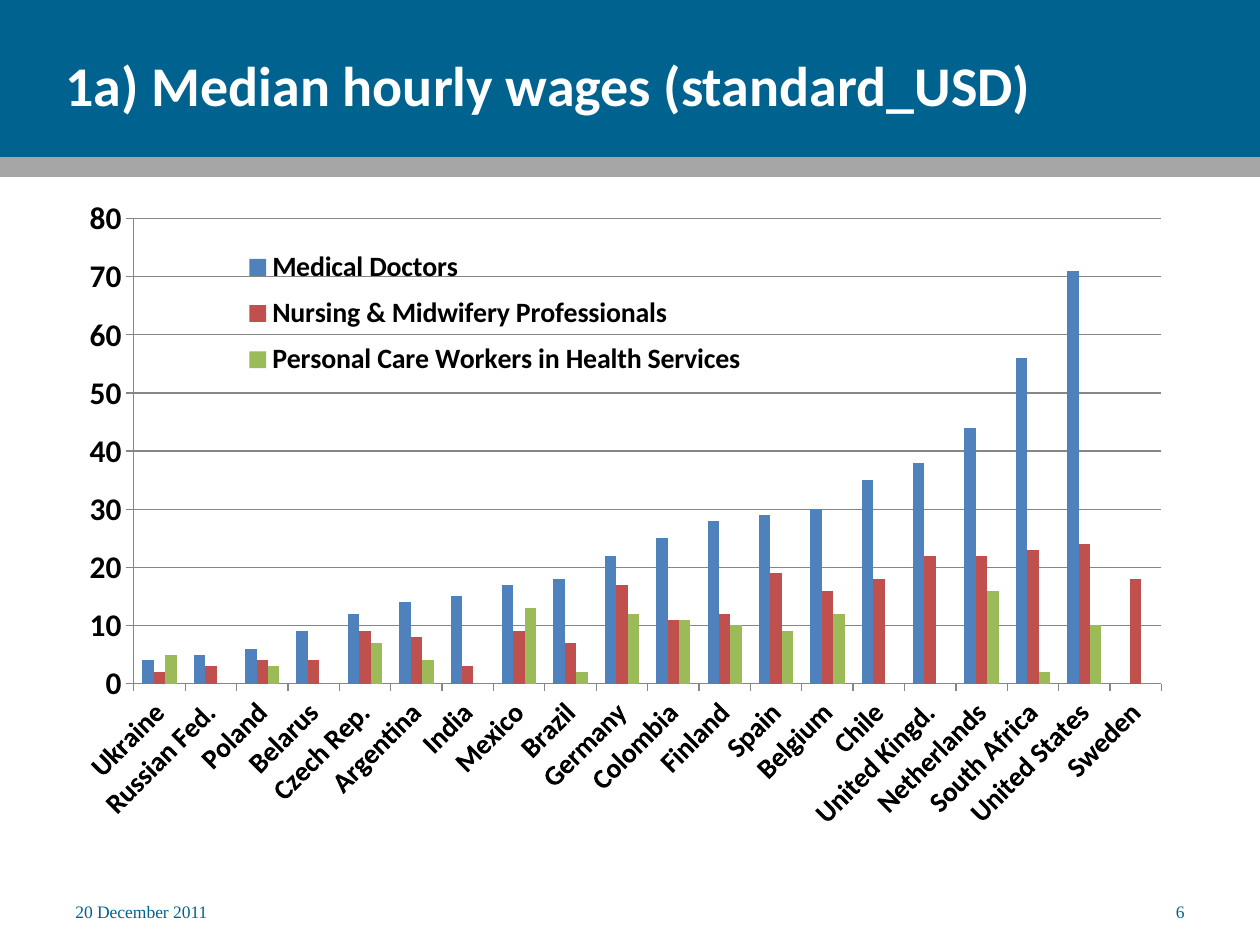
from lxml.etree import SubElement
from pptx import Presentation
from pptx.chart.data import CategoryChartData
from pptx.dml.color import RGBColor
from pptx.enum.chart import XL_CHART_TYPE, XL_LEGEND_POSITION, XL_TICK_MARK
from pptx.enum.shapes import MSO_SHAPE
from pptx.enum.text import MSO_ANCHOR, PP_ALIGN
from pptx.oxml.ns import qn
from pptx.util import Inches, Pt

SCALE = Inches(1) / 126
HEX = {
    "blue": "00638F", "gray": "A6A6A6", "white": "FFFFFF", "black": "000000",
    "line": "868686", "doctor": "4F81BD", "nurse": "C0504D", "carer": "9BBB59",
}
LANDS = [
    "Ukraine", "Russian Fed.", "Poland", "Belarus", "Czech Rep.", "Argentina", "India",
    "Mexico", "Brazil", "Germany", "Colombia", "Finland", "Spain", "Belgium", "Chile",
    "United Kingd.", "Netherlands", "South Africa", "United States", "Sweden",
]
WAGES = [
    ("Medical Doctors", "doctor",
     [4, 5, 6, 9, 12, 14, 15, 17, 18, 22, 25, 28, 29, 30, 35, 38, 44, 56, 71, 0]),
    ("Nursing & Midwifery Professionals", "nurse",
     [2, 3, 4, 4, 9, 8, 3, 9, 7, 17, 11, 12, 19, 16, 18, 22, 22, 23, 24, 18]),
    ("Personal Care Workers in Health Services", "carer",
     [5, 0, 3, 0, 7, 4, 0, 13, 2, 12, 11, 10, 9, 12, 0, 0, 16, 2, 10, 0]),
]


def px(*sizes):
    """Turn px lengths into EMU."""
    return [round(size * SCALE) for size in sizes]


def color(name):
    """Give the named colour."""
    return RGBColor.from_string(HEX[name])


def style(font, size, tint="black", bold=False, face="Calibri"):
    """Format a font."""
    font.name, font.size, font.bold = face, Pt(size), bold
    font.color.rgb = color(tint)


def write(frame, text, align=PP_ALIGN.LEFT, **look):
    """Put formatted text in a frame."""
    frame.word_wrap = True
    frame.vertical_anchor = MSO_ANCHOR.MIDDLE
    para = frame.paragraphs[0]
    para.alignment = align
    run = para.add_run()
    run.text = text
    style(run.font, **look)


def place(part, index, **spots):
    """Give a chart part a fixed layout."""
    for old in part.findall(qn("c:layout")):
        part.remove(old)
    layout = SubElement(part, qn("c:layout"))
    part.insert(index, layout)
    manual = SubElement(layout, qn("c:manualLayout"))
    for tag, value in spots.items():
        SubElement(manual, qn("c:" + tag)).set("val", str(value))


class Deck:
    """Hold the style and the current slide."""

    def __init__(self):
        """Open a deck with one slide."""
        self.file = Presentation()
        self.file.slide_width, self.file.slide_height = px(1260, 945)
        self.slide = self.file.slides.add_slide(self.file.slide_layouts[5])
        self.small = {"size": 10, "tint": "blue", "face": "Times New Roman"}

    def band(self, top, height, tint):
        """Draw a full-width band behind the title."""
        shape = self.slide.shapes.add_shape(MSO_SHAPE.RECTANGLE, *px(0, top, 1260, height))
        shape.shadow.inherit = False
        shape.fill.solid()
        shape.fill.fore_color.rgb = color(tint)
        shape.line.fill.background()
        self.slide.shapes[0].element.addprevious(shape.element)

    def title(self, text):
        """Fill the title."""
        head = self.slide.shapes.title
        head.left, head.top, head.width, head.height = px(53, 20, 1207, 129)
        write(head.text_frame, text, size=32, tint="white", bold=True)

    def note(self, left, text, align=PP_ALIGN.LEFT):
        """Add a footer text."""
        box = self.slide.shapes.add_textbox(*px(left, 896, 294, 30))
        write(box.text_frame, text, align, **self.small)

    def axis(self, axis, size):
        """Format a chart axis."""
        style(axis.tick_labels.font, size, bold=True)
        axis.major_tick_mark = XL_TICK_MARK.OUTSIDE
        self.rule(axis.format.line)

    def rule(self, line):
        """Format an axis or grid line."""
        line.color.rgb = color("line")
        line.width = Pt(0.75)

    def chart(self, lands, wages):
        """Add the clustered wage columns."""
        data = CategoryChartData()
        data.categories = lands
        for name, _, values in wages:
            data.add_series(name, values)
        chart = self.slide.shapes.add_chart(
            XL_CHART_TYPE.COLUMN_CLUSTERED, *px(84, 199, 1134, 655), data).chart
        style(chart.font, 10)
        chart.has_title = False
        plot = chart.plots[0]
        plot.gap_width, plot.overlap = 150, 0
        plot.vary_by_categories = False
        for series, (_, tint, _) in zip(plot.series, wages):
            series.format.fill.solid()
            series.format.fill.fore_color.rgb = color(tint)
        self.axis(chart.category_axis, 16)
        chart.category_axis._element.txPr.bodyPr.set("rot", "-2700000")
        scale = chart.value_axis
        self.axis(scale, 18)
        scale.minimum_scale, scale.maximum_scale, scale.major_unit = 0, 80, 10
        scale.has_major_gridlines = True
        self.rule(scale.major_gridlines.format.line)
        chart.has_legend = True
        legend = chart.legend
        legend.position = XL_LEGEND_POSITION.RIGHT
        legend.include_in_layout = False
        style(legend.font, 16, bold=True)
        place(legend._element, 1, xMode="edge", yMode="edge", x=0.13, y=0.06, w=0.46, h=0.23)
        area = chart._chartSpace.chart.plotArea
        place(area, 0, layoutTarget="inner", xMode="edge", yMode="edge",
              x=0.04, y=0.03, w=0.91, h=0.71)


def main():
    """Build the wage slide."""
    deck = Deck()
    deck.band(0, 157, "blue")
    deck.band(157, 20, "gray")
    deck.title("1a) Median hourly wages (standard_USD)")
    deck.note(63, "20 December 2011")
    deck.note(903, "6", PP_ALIGN.RIGHT)
    deck.chart(LANDS, WAGES)
    deck.file.save("out.pptx")


if __name__ == "__main__":
    main()
